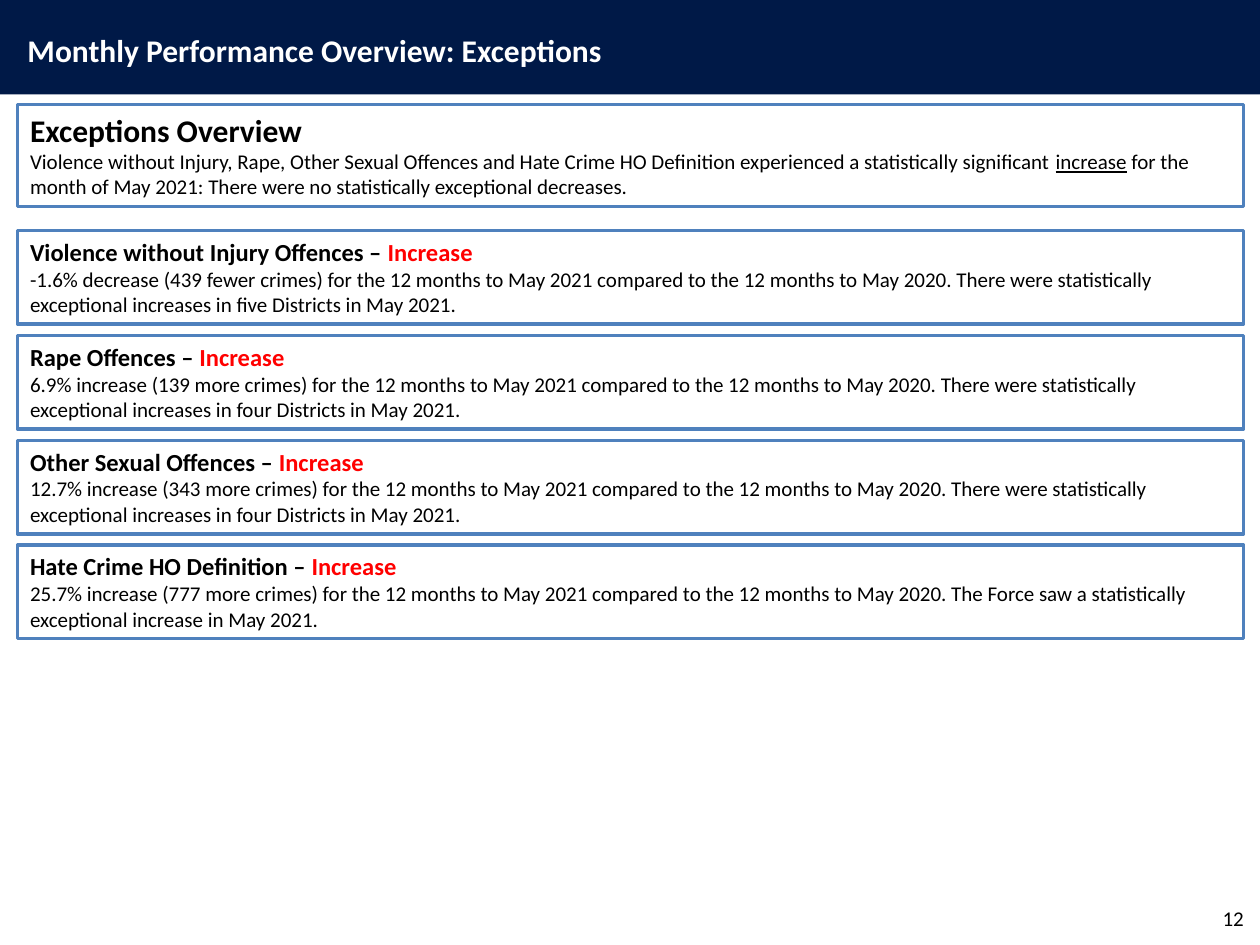
from pptx import Presentation
from pptx.dml.color import RGBColor
from pptx.enum.shapes import MSO_SHAPE
from pptx.enum.text import MSO_ANCHOR, MSO_AUTO_SIZE, PP_ALIGN
from pptx.util import Inches, Pt

COLORS = {
    "navy": "001947",
    "white": "FFFFFF",
    "border": "4F81BD",
    "black": "000000",
    "alert": "FF0000",
}

PAGE_TITLE = {"size": Pt(18), "bold": True, "color": "white"}
OVERVIEW_HEADING = {"size": Pt(18), "bold": True, "color": "black"}
OFFENCE_HEADING = {"size": Pt(14), "bold": True, "color": "black"}
TREND = {**OFFENCE_HEADING, "color": "alert"}
BODY = {"size": Pt(12), "bold": False, "color": "black"}
EMPHASIS = {**BODY, "underline": True}

PERIOD = "for the 12 months to May 2021 compared to the 12 months to May 2020."
OFFENCES = [
    ("Violence without Injury Offences", "-1.6% decrease (439 fewer crimes)",
     "There were statistically exceptional increases in five Districts in May 2021."),
    ("Rape Offences", "6.9% increase (139 more crimes)",
     "There were statistically exceptional increases in four Districts in May 2021."),
    ("Other Sexual Offences", "12.7% increase (343 more crimes)",
     "There were statistically exceptional increases in four Districts in May 2021."),
    ("Hate Crime HO Definition", "25.7% increase (777 more crimes)",
     "The Force saw a statistically exceptional increase in May 2021."),
]


def rgb(name):
    return RGBColor.from_string(COLORS[name])


def write(frame, paragraphs, **settings):
    for name, value in {"word_wrap": True, **settings}.items():
        setattr(frame, name, value)
    for index, runs in enumerate(paragraphs):
        paragraph = frame.paragraphs[0] if index == 0 else frame.add_paragraph()
        paragraph.alignment = PP_ALIGN.LEFT
        for text, style in runs:
            run = paragraph.add_run()
            run.text = text
            for name, value in {"name": "Calibri", **style}.items():
                if name == "color":
                    run.font.color.rgb = rgb(value)
                else:
                    setattr(run.font, name, value)


def add_panel(slide, box, fill, border=None):
    panel = slide.shapes.add_shape(MSO_SHAPE.RECTANGLE, *map(Inches, box))
    panel.shadow.inherit = False
    panel.fill.solid()
    panel.fill.fore_color.rgb = rgb(fill)
    if border:
        panel.line.color.rgb = rgb(border)
        panel.line.width = Pt(2)
    else:
        panel.line.fill.background()
    return panel


def add_header(slide, box):
    left, top, width, height = box
    add_panel(slide, box, "navy")
    title = slide.shapes.add_textbox(
        Inches(left + 0.12), Inches(top + 0.2), Inches(5.67), Inches(0.4))
    write(title.text_frame, [[("Monthly Performance Overview: Exceptions", PAGE_TITLE)]],
          auto_size=MSO_AUTO_SIZE.SHAPE_TO_FIT_TEXT)


def add_report_panel(slide, box, heading, body):
    panel = add_panel(slide, box, "white", "border")
    write(panel.text_frame, [heading, body],
          vertical_anchor=MSO_ANCHOR.TOP,
          auto_size=MSO_AUTO_SIZE.SHAPE_TO_FIT_TEXT)


def add_overview(slide, box):
    add_report_panel(slide, box, [("Exceptions Overview", OVERVIEW_HEADING)], [
        ("Violence without Injury, Rape, Other Sexual Offences and Hate Crime HO "
         "Definition experienced a statistically significant ", BODY),
        ("increase", EMPHASIS),
        (" for the month of May 2021: There were no statistically exceptional decreases.", BODY),
    ])


def add_offences(slide, box):
    left, top, width, height = box
    gap = 0.09
    panel_height = (height - gap * (len(OFFENCES) - 1)) / len(OFFENCES)
    for index, (offence, change, finding) in enumerate(OFFENCES):
        panel_top = top + index * (panel_height + gap)
        add_report_panel(
            slide, (left, panel_top, width, panel_height),
            [(f"{offence} – ", OFFENCE_HEADING), ("Increase", TREND)],
            [(f"{change} {PERIOD} {finding}", BODY)])


def add_page_number(slide, box):
    number = slide.shapes.add_textbox(*map(Inches, box))
    write(number.text_frame, [[("12", BODY)]], vertical_anchor=MSO_ANCHOR.MIDDLE)
    number.text_frame.paragraphs[0].alignment = PP_ALIGN.RIGHT


def main():
    deck = Presentation()
    deck.slide_width, deck.slide_height = Inches(10), Inches(7.5)
    slide = deck.slides.add_slide(deck.slide_layouts[6])
    add_header(slide, (0, 0, 10, 0.75))
    add_overview(slide, (0.14, 0.83, 9.73, 0.81))
    add_offences(slide, (0.14, 1.83, 9.73, 3.24))
    add_page_number(slide, (7.64, 7.09, 2.33, 0.4))
    deck.save("out.pptx")


if __name__ == "__main__":
    main()
